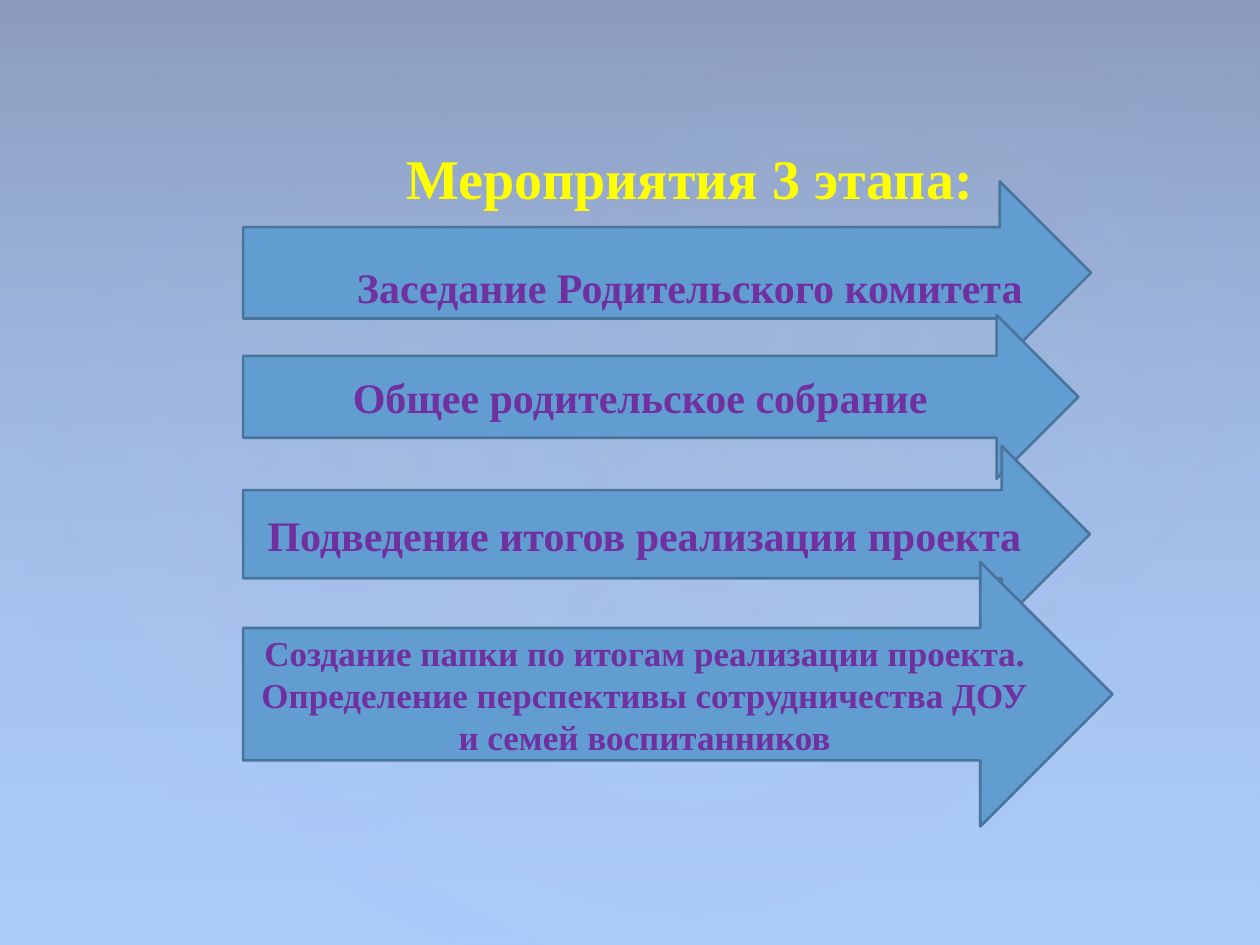
import dataclasses
import typing

import lxml.etree
import pptx
import pptx.dml.color
import pptx.enum.shapes
import pptx.enum.text
import pptx.oxml
import pptx.oxml.ns
import pptx.util

Inches = pptx.util.Inches
Shapes = pptx.enum.shapes.MSO_SHAPE


@dataclasses.dataclass(frozen=True)
class Theme:
    font: str = "Times New Roman"
    page: str = "ACCBF9"
    shade: str = "504652"
    glow: str = "C4BCC6"
    arrow: str = "629DD1"
    outline: str = "49749B"
    title: str = "FFFF00"
    label: str = "7030A0"
    title_size: int = 32
    label_size: int = 24
    small_size: int = 20


class Stop(typing.NamedTuple):
    position: int
    color: str
    opacity: int


class Glow(typing.NamedTuple):
    left: float
    top: float
    width: float
    height: float
    rotation: float
    opacity: int


class Arrow(typing.NamedTuple):
    top: float
    width: float
    height: float
    text: str = ""
    size: int = 24
    spacing: int = 0


THEME = Theme()
ARROW_LEFT = 1.93
LINEAR = '<a:lin ang="5400000" scaled="0"/>'
RADIAL = ('<a:path path="circle"><a:fillToRect l="50000" t="50000" '
          'r="50000" b="50000"/></a:path>')

GLOWS = [
    Glow(1.5, 1.14, 7.92, 6.24, 328.7, 7),
    Glow(-0.3, 1.28, 6.06, 4.9, 294.3, 8),
    Glow(3.58, 0.13, 7.09, 5.2, 328.7, 8),
]
FIRST_ARROW = Arrow(1.44, 6.73, 1.45)
LABELLED_ARROWS = [
    Arrow(2.5, 6.63, 1.3, "Общее родительское собрание", THEME.label_size),
    Arrow(3.54, 6.72, 1.4, "Подведение итогов реализации проекта", THEME.label_size),
    Arrow(4.46, 6.9, 2.1,
          "Создание папки по итогам реализации проекта. Определение "
          "перспективы сотрудничества ДОУ и семей воспитанников",
          THEME.small_size, 9),
]


def rgb(value: str) -> pptx.dml.color.RGBColor:
    return pptx.dml.color.RGBColor.from_string(value)


def add_plain_shape(page, kind, left: float, top: float, width: float, height: float):
    shape = page.shapes.add_shape(
        kind, Inches(left), Inches(top), Inches(width), Inches(height))
    shape.shadow.inherit = False
    shape.line.fill.background()
    return shape


def set_gradient(shape, stops: list[Stop], direction: str) -> None:
    """Give the shape a gradient whose stops have their own opacity."""
    shape.fill.background()
    marks = "".join(
        f'<a:gs pos="{stop.position * 1000}"><a:srgbClr val="{stop.color}">'
        f'<a:alpha val="{stop.opacity * 1000}"/></a:srgbClr></a:gs>'
        for stop in stops)
    gradient = pptx.oxml.parse_xml(
        f'<a:gradFill {pptx.oxml.ns.nsdecls("a")} rotWithShape="1">'
        f'<a:gsLst>{marks}</a:gsLst>{direction}</a:gradFill>')
    properties = shape._element.spPr
    empty_fill = properties.find(pptx.oxml.ns.qn("a:noFill"))
    properties.replace(empty_fill, gradient)


def style_paragraph(para, size: int, color: str) -> None:
    para.alignment = pptx.enum.text.PP_ALIGN.CENTER
    for span in para.runs:
        span.font.name = THEME.font
        span.font.size = pptx.util.Pt(size)
        span.font.bold = True
        span.font.color.rgb = rgb(color)


def add_background(page) -> None:
    page.background.fill.solid()
    page.background.fill.fore_color.rgb = rgb(THEME.page)
    shade = add_plain_shape(page, Shapes.RECTANGLE, 0, 0, 10, 7.5)
    set_gradient(shade, [Stop(0, THEME.shade, 36), Stop(100, THEME.page, 10)], LINEAR)
    for glow in GLOWS:
        oval = add_plain_shape(page, Shapes.OVAL, *glow[:4])
        oval.rotation = glow.rotation
        set_gradient(
            oval, [Stop(0, THEME.glow, glow.opacity), Stop(58, THEME.page, 0)], RADIAL)


def add_arrow(page, arrow: Arrow) -> None:
    shape = add_plain_shape(
        page, Shapes.RIGHT_ARROW, ARROW_LEFT, arrow.top, arrow.width, arrow.height)
    shape.fill.solid()
    shape.fill.fore_color.rgb = rgb(THEME.arrow)
    shape.line.color.rgb = rgb(THEME.outline)
    shape.line.width = pptx.util.Pt(1.5)
    if arrow.text:
        frame = shape.text_frame
        frame.text = arrow.text
        frame.word_wrap = True
        frame.vertical_anchor = pptx.enum.text.MSO_ANCHOR.MIDDLE
        para = frame.paragraphs[0]
        para.space_before = para.space_after = pptx.util.Pt(arrow.spacing)
        style_paragraph(para, arrow.size, THEME.label)


def add_heading(page) -> None:
    """Title and the label of the first arrow share one text box."""
    box = page.shapes.add_textbox(
        Inches(ARROW_LEFT), Inches(1.14), Inches(7.09), Inches(1.3))
    frame = box.text_frame
    frame.word_wrap = True
    frame.margin_top = frame.margin_bottom = 0
    frame.text = "Мероприятия 3 этапа:\nЗаседание Родительского комитета"
    title, label = frame.paragraphs
    style_paragraph(title, THEME.title_size, THEME.title)
    style_paragraph(label, THEME.label_size, THEME.label)
    label.space_before = pptx.util.Pt(29)


def main() -> None:
    deck = pptx.Presentation()
    deck.slide_width, deck.slide_height = Inches(10), Inches(7.5)
    page = deck.slides.add_slide(deck.slide_layouts[6])

    # Backdrop
    add_background(page)

    # First arrow with the heading above it
    add_arrow(page, FIRST_ARROW)
    add_heading(page)

    # Remaining arrows, each overlapping the one before
    for arrow in LABELLED_ARROWS:
        add_arrow(page, arrow)

    deck.save("out.pptx")


if __name__ == "__main__":
    main()
